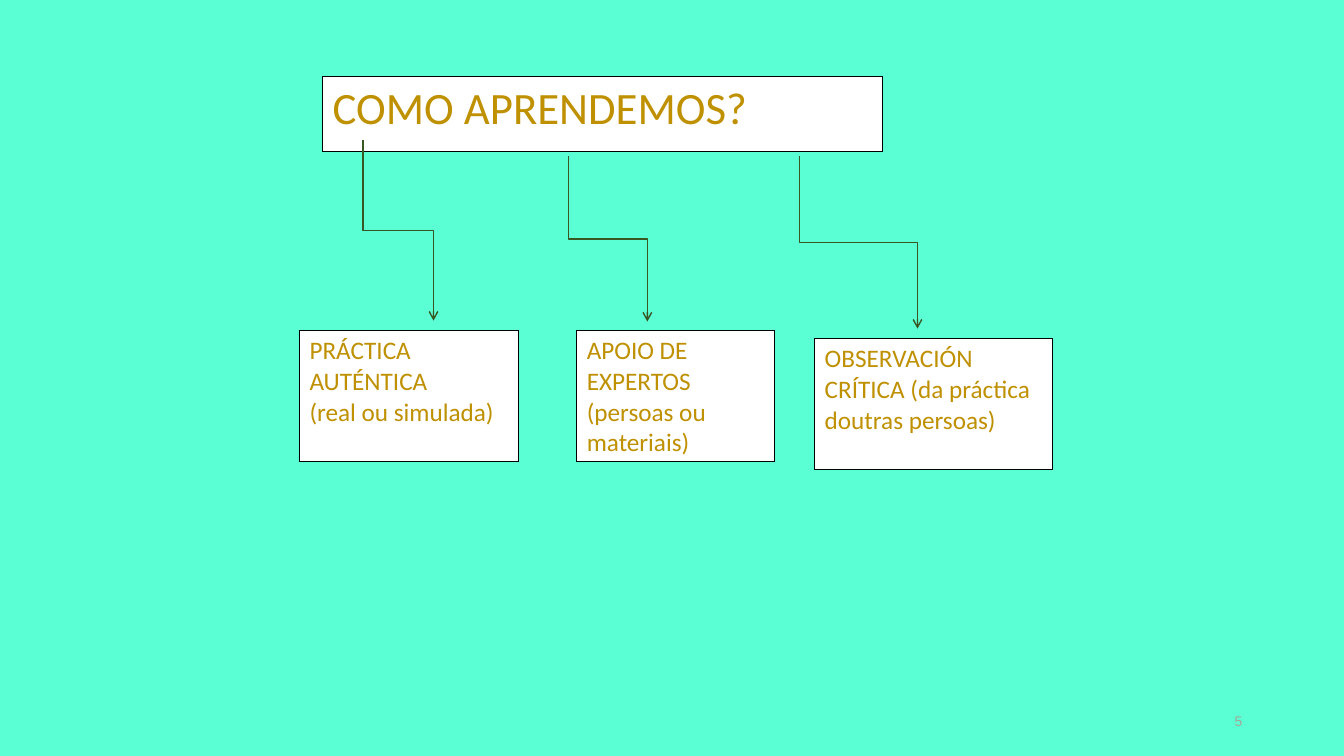
"""Build a slide showing the three ways in which we learn."""
from dataclasses import dataclass

from lxml import etree
from pptx import Presentation
from pptx import util as u
from pptx.dml.color import RGBColor
from pptx.enum import shapes, text
from pptx.oxml import ns

GOLD, GREEN, WHITE, BLACK = "BF9000", "385723", "FFFFFF", "000000"
MINT, GREY = "5BFFD4", "A7A399"


@dataclass
class Box:
    left: float
    top: float
    width: float
    height: float
    size: int
    lines: list[str]


@dataclass
class Arrow:
    start: tuple[float, float]
    end: tuple[float, float]


BOXES = [
    Box(3.2, 0.76, 5.55, 0.74, 32, ["COMO APRENDEMOS?"]),
    Box(2.97, 3.28, 2.17, 1.3, 18, ["PRÁCTICA AUTÉNTICA", "(real ou simulada)"]),
    Box(5.72, 3.28, 1.96, 1.3, 18, ["APOIO DE EXPERTOS", "(persoas ou materiais)"]),
    Box(8.08, 3.36, 2.36, 1.3, 18,
        ["OBSERVACIÓN CRÍTICA (da práctica doutras persoas)"]),
]
ARROWS = [
    Arrow((3.6, 1.39), (4.3, 3.18)),
    Arrow((5.64, 1.55), (6.42, 3.19)),
    Arrow((7.93, 1.55), (9.1, 3.26)),
]


def color(value: str) -> RGBColor:
    return RGBColor.from_string(value)


def set_font(paragraph, name: str, size: int, value: str) -> None:
    paragraph.font.name = name
    paragraph.font.size = u.Pt(size)
    paragraph.font.color.rgb = color(value)


def add_borders(cell) -> None:
    properties = cell._tc.get_or_add_tcPr()
    for side in "LRTB":
        line = etree.SubElement(properties, ns.qn(f"a:ln{side}"), w=str(u.Pt(1)))
        fill = etree.SubElement(line, ns.qn("a:solidFill"))
        etree.SubElement(fill, ns.qn("a:srgbClr"), val=BLACK)


def add_box(slide, box: Box) -> None:
    table = slide.shapes.add_table(
        1, 1, u.Inches(box.left), u.Inches(box.top),
        u.Inches(box.width), u.Inches(box.height)).table
    table.first_row = table.horz_banding = False
    cell = table.cell(0, 0)
    add_borders(cell)
    cell.fill.solid()
    cell.fill.fore_color.rgb = color(WHITE)
    cell.text = "\n".join(box.lines)
    for paragraph in cell.text_frame.paragraphs:
        set_font(paragraph, "Calibri", box.size, GOLD)


def add_arrow(slide, arrow: Arrow) -> None:
    (x1, y1), (x2, y2) = arrow.start, arrow.end
    middle_x, middle_y = (x1 + x2) / 2, (y1 + y2) / 2
    half_run, half_drop = (x2 - x1) / 2, (y2 - y1) / 2
    connector = slide.shapes.add_connector(
        shapes.MSO_CONNECTOR.ELBOW,
        u.Inches(middle_x + half_drop), u.Inches(middle_y - half_run),
        u.Inches(middle_x - half_drop), u.Inches(middle_y + half_run))
    connector.line.color.rgb = color(GREEN)
    connector.line.width = u.Pt(1)
    properties = connector.element.spPr
    properties.find(ns.qn("a:xfrm")).set("rot", str(270 * 60000))
    etree.SubElement(properties.find(ns.qn("a:ln")), ns.qn("a:tailEnd"), type="arrow")
    etree.SubElement(properties, ns.qn("a:effectLst"))


def add_page_number(slide, number: int) -> None:
    frame = slide.shapes.add_textbox(
        u.Inches(9.42), u.Inches(6.95), u.Inches(3), u.Inches(0.4)).text_frame
    frame.word_wrap = True
    frame.vertical_anchor = text.MSO_ANCHOR.MIDDLE
    frame.text = str(number)
    paragraph = frame.paragraphs[0]
    paragraph.alignment = text.PP_ALIGN.RIGHT
    set_font(paragraph, "Arial", 10, GREY)


def main() -> None:
    deck = Presentation()
    deck.slide_width, deck.slide_height = u.Inches(13.33), u.Inches(7.5)
    slide = deck.slides.add_slide(deck.slide_layouts[6])
    slide.background.fill.solid()
    slide.background.fill.fore_color.rgb = color(MINT)
    add_page_number(slide, 5)
    for box in BOXES:
        add_box(slide, box)
    for arrow in ARROWS:
        add_arrow(slide, arrow)
    deck.save("out.pptx")


if __name__ == "__main__":
    main()
